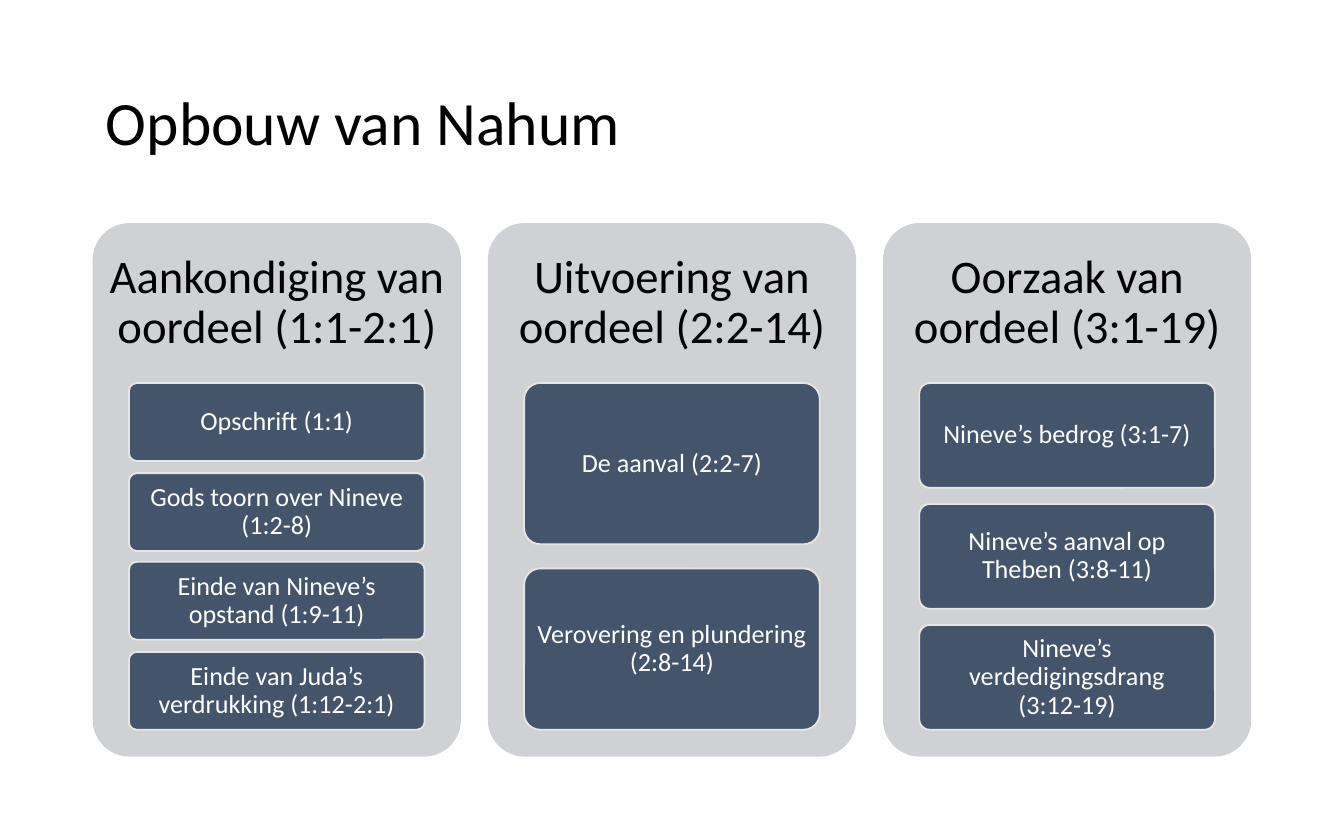
from dataclasses import dataclass

import pptx
import pptx.dml.color
import pptx.enum.shapes
import pptx.enum.text
import pptx.util

RGB = pptx.dml.color.RGBColor
ALIGN = pptx.enum.text.PP_ALIGN
ROUND = pptx.enum.shapes.MSO_SHAPE.ROUNDED_RECTANGLE

BLACK = RGB(0x00, 0x00, 0x00)
WHITE = RGB(0xFF, 0xFF, 0xFF)
GREY = RGB(0xCF, 0xD1, 0xD4)
NAVY = RGB(0x44, 0x54, 0x6A)
EDGE = RGB(0xE7, 0xE6, 0xE6)

SCALE = 9144  # EMU per px, 100 px to the inch
LEFT, TOP = 69, 166
WIDTH, HEIGHT = 274, 397
STEP = 294
HEAD = 119
INSET = 27
STACK = 258  # height shared by the items of one column
GAP = 0.15  # gap as a share of the item height


@dataclass
class Column:
    head: str
    items: list[str]


@dataclass
class Style:
    size: int
    color: RGB
    align: ALIGN
    pad: tuple[int, int]


TITLE = Style(33, BLACK, ALIGN.LEFT, (10, 5))
HEADER = Style(25, BLACK, ALIGN.CENTER, (10, 10))
ITEM = Style(14, WHITE, ALIGN.CENTER, (4, 3))

COLUMNS = [
    Column("Aankondiging van oordeel (1:1-2:1)", [
        "Opschrift (1:1)",
        "Gods toorn over Nineve (1:2-8)",
        "Einde van Nineve’s opstand (1:9-11)",
        "Einde van Juda’s verdrukking (1:12-2:1)",
    ]),
    Column("Uitvoering van oordeel (2:2-14)", [
        "De aanval (2:2-7)",
        "Verovering en plundering (2:8-14)",
    ]),
    Column("Oorzaak van oordeel (3:1-19)", [
        "Nineve’s bedrog (3:1-7)",
        "Nineve’s aanval op Theben (3:8-11)",
        "Nineve’s verdedigingsdrang\v(3:12-19)",
    ]),
]


def px(*vals: int) -> list[int]:
    return [pptx.util.Emu(val * SCALE) for val in vals]


def assign(obj, vals: dict) -> None:
    for name, val in vals.items():
        setattr(obj, name, val)


def write(shape, text: str, style: Style) -> None:
    side, edge = px(*style.pad)
    frame = shape.text_frame
    assign(frame, {
        "word_wrap": True,
        "vertical_anchor": pptx.enum.text.MSO_ANCHOR.MIDDLE,
        "margin_left": side, "margin_right": side,
        "margin_top": edge, "margin_bottom": edge,
    })
    para = frame.paragraphs[0]
    para.text = text
    assign(para, {"alignment": style.align, "line_spacing": 0.9})
    assign(para.font, {"size": pptx.util.Pt(style.size), "name": "Calibri"})
    para.font.color.rgb = style.color


def label(slide, box: tuple, text: str, style: Style) -> None:
    write(slide.shapes.add_textbox(*px(*box)), text, style)


def panel(slide, box: tuple, fill: RGB, edge: RGB | None = None):
    shape = slide.shapes.add_shape(ROUND, *px(*box))
    shape.adjustments[0] = 0.1
    shape.shadow.inherit = False
    shape.fill.solid()
    shape.fill.fore_color.rgb = fill
    if edge is None:
        shape.line.fill.background()
    else:
        shape.line.color.rgb = edge
        shape.line.width = pptx.util.Pt(1)
    return shape


def draw(slide, col: Column, left: int) -> None:
    # Panel and its heading
    panel(slide, (left, TOP, WIDTH, HEIGHT), GREY)
    label(slide, (left, TOP, WIDTH, HEAD), col.head, HEADER)

    # Items share the stack height evenly
    count = len(col.items)
    unit = STACK / (count + GAP * (count - 1))
    for row, text in enumerate(col.items):
        top = round(TOP + HEAD + row * unit * (1 + GAP))
        box = (left + INSET, top, WIDTH - 2 * INSET, round(unit))
        write(panel(slide, box, NAVY, EDGE), text, ITEM)


def main() -> None:
    deck = pptx.Presentation()
    deck.slide_width, deck.slide_height = px(1000, 625)
    slide = deck.slides.add_slide(deck.slide_layouts[6])

    # Title
    label(slide, (69, 33, 862, 121), "Opbouw van Nahum", TITLE)

    # Columns
    for idx, col in enumerate(COLUMNS):
        draw(slide, col, LEFT + idx * STEP)

    deck.save("out.pptx")


if __name__ == "__main__":
    main()
